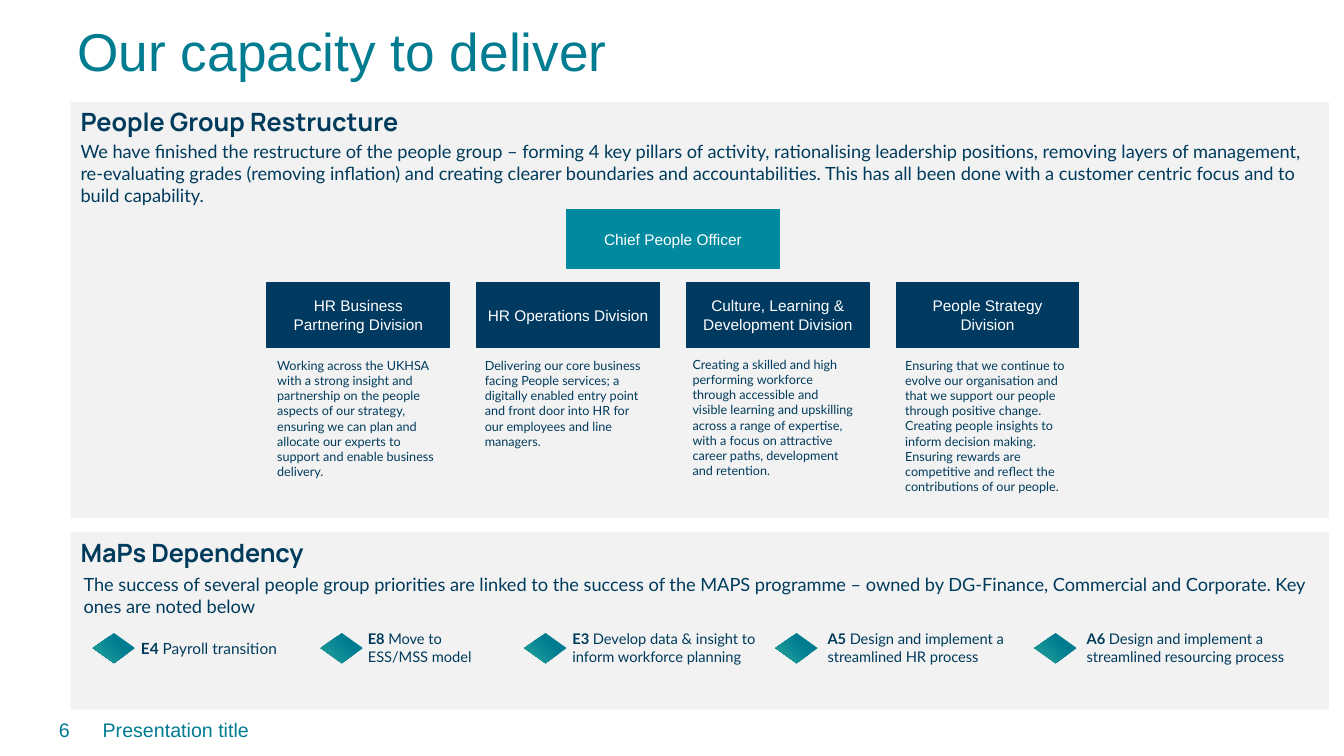
from dataclasses import dataclass

from lxml.etree import SubElement
from pptx import Presentation
from pptx.dml.color import RGBColor
from pptx.enum.shapes import MSO_SHAPE as Shape
from pptx.enum.text import MSO_ANCHOR as Anchor, MSO_AUTO_SIZE as AutoSize, PP_ALIGN as Align
from pptx.oxml.ns import qn
from pptx.util import Pt

PX = 9144  # EMU per px, 100 px to the inch


@dataclass(frozen=True)
class Theme:
    teal: str = "007C91"
    bright_teal: str = "008AA0"
    green: str = "26A59A"
    navy: str = "003A60"
    ink: str = "003B5C"
    panel: str = "F2F2F2"
    white: str = "FFFFFF"
    plain_font: str = "Arial"
    body_font: str = "Lato"
    heading_font: str = "Manrope"
    title_size: float = 38
    heading_size: float = 18
    footer_size: float = 14
    body_size: float = 13
    box_size: float = 11
    milestone_size: float = 10.5
    description_size: float = 9


THEME = Theme()

DIVISIONS = [
    ("HR Business Partnering Division", (265, 350, 181, 131),
     "Working across the UKHSA with a strong insight and partnership on the people aspects of "
     "our strategy, ensuring we can plan and allocate our experts to\n"
     "support and enable business\ndelivery."),
    ("HR Operations Division", (471, 350, 181, 101),
     "Delivering our core business facing People services; a\n"
     "digitally enabled entry point and front door into HR for our employees and line managers."),
    ("Culture, Learning & Development Division", (677, 349, 181, 131),
     "Creating a skilled and high\n"
     "performing workforce through accessible and visible learning and upskilling across a range "
     "of expertise, with a focus on attractive career paths, development and retention."),
    ("People Strategy Division", (888, 350, 187, 146),
     "Ensuring that we continue to\nevolve our organisation and\nthat we support our people\n"
     "through positive change. Creating people insights to inform decision making. "
     "Ensuring rewards are\ncompetitive and reflect the\ncontributions of our people."),
]

# code, wording, diamond left, text box, type size
MILESTONES = [
    ("E4", "Payroll transition", 92, (130, 629, 177, 29), THEME.box_size),
    ("E8", "Move to ESS/MSS model", 318, (355, 620, 131, 45), THEME.milestone_size),
    ("E3", "Develop data & insight to inform workforce planning", 520, (558, 620, 206, 45),
     THEME.milestone_size),
    ("A5", "Design and implement a streamlined HR process", 769, (811, 620, 220, 45),
     THEME.milestone_size),
    ("A6", "Design and implement a streamlined resourcing process", 1026, (1068, 620, 227, 45),
     THEME.milestone_size),
]


def emu(box):
    return [length * PX for length in box]


def style(paragraph, font, size, color, bold=False, align=Align.LEFT):
    paragraph.alignment = align
    for run in paragraph.runs:
        run.font.name = font
        run.font.size = Pt(size)
        run.font.bold = bold
        run.font.color.rgb = RGBColor.from_string(color)


def add_text(slide, box, text, font, size, color, align=Align.LEFT, anchor=Anchor.TOP,
             grow=False):
    text_frame = slide.shapes.add_textbox(*emu(box)).text_frame
    text_frame.word_wrap = True
    text_frame.auto_size = AutoSize.SHAPE_TO_FIT_TEXT if grow else AutoSize.NONE
    text_frame.vertical_anchor = anchor
    text_frame.text = text
    for paragraph in text_frame.paragraphs:
        style(paragraph, font, size, color, align=align)
    return text_frame


def add_rectangle(slide, box, fill, line=None):
    shape = slide.shapes.add_shape(Shape.RECTANGLE, *emu(box))
    shape.shadow.inherit = False
    shape.fill.solid()
    shape.fill.fore_color.rgb = RGBColor.from_string(fill)
    if line:
        shape.line.color.rgb = RGBColor.from_string(line)
        shape.line.width = Pt(1)
    else:
        shape.line.fill.background()
    shape.text_frame.word_wrap = True
    return shape


def add_panel(slide, box, heading):
    text_frame = add_rectangle(slide, box, THEME.panel).text_frame
    text_frame.vertical_anchor = Anchor.TOP
    text_frame.text = heading
    style(text_frame.paragraphs[0], THEME.heading_font, THEME.heading_size, THEME.ink, bold=True)
    return text_frame


def add_role(slide, box, text, color):
    text_frame = add_rectangle(slide, box, color, line=color).text_frame
    text_frame.vertical_anchor = Anchor.MIDDLE
    text_frame.text = text
    style(text_frame.paragraphs[0], THEME.plain_font, THEME.box_size, THEME.white,
          align=Align.CENTER)


def add_diamond(slide, left):
    """Decision shape whose gradient spreads from the lower left corner."""
    diamond = slide.shapes.add_shape(Shape.FLOWCHART_DECISION, *emu((left, 628, 42, 30)))
    diamond.shadow.inherit = False
    diamond.line.fill.background()
    diamond.fill.gradient()
    for stop, position, color in zip(diamond.fill.gradient_stops, (0, 0.65),
                                     (THEME.green, THEME.teal)):
        stop.position = position
        stop.color.rgb = RGBColor.from_string(color)
    gradient = diamond.element.spPr.find(qn("a:gradFill"))
    gradient.remove(gradient.find(qn("a:lin")))
    circle = SubElement(gradient, qn("a:path"), {"path": "circle"})
    SubElement(circle, qn("a:fillToRect"), {"t": "100000", "r": "100000"})


def add_milestone(slide, code, wording, diamond_left, box, size):
    add_diamond(slide, diamond_left)
    text_frame = add_text(slide, box, f"{code} ", THEME.body_font, size, THEME.ink, grow=True)
    paragraph = text_frame.paragraphs[0]
    paragraph.add_run().text = wording
    style(paragraph, THEME.body_font, size, THEME.ink)
    paragraph.runs[0].font.bold = True


def add_restructure(slide):
    text_frame = add_panel(slide, (70, 101, 1248, 413), "People Group Restructure")
    summary = text_frame.add_paragraph()
    summary.text = (
        "We have finished the restructure of the people group – forming 4 key pillars of "
        "activity, rationalising leadership positions, removing layers of management, "
        "re-evaluating grades (removing inflation) and creating clearer boundaries and "
        "accountabilities. This has all been done with a customer centric focus and to build "
        "capability.")
    summary.space_before = Pt(2.4)
    style(summary, THEME.body_font, THEME.body_size, THEME.ink)

    add_role(slide, (562, 208, 211, 58), "Chief People Officer", THEME.bright_teal)
    for index, (division, description_box, description) in enumerate(DIVISIONS):
        add_role(slide, (265 + 208 * index, 280, 181, 65), division, THEME.navy)
        add_text(slide, description_box, description, THEME.body_font, THEME.description_size,
                 THEME.ink, grow=True)


def add_dependency(slide):
    add_panel(slide, (70, 528, 1248, 176), "MaPs Dependency")
    add_text(slide, (73, 564, 1235, 54),
             "The success of several people group priorities are linked to the success of the "
             "MAPS programme – owned by DG-Finance, Commercial and Corporate. Key ones are noted "
             "below", THEME.body_font, THEME.body_size, THEME.ink, grow=True)
    for milestone in MILESTONES:
        add_milestone(slide, *milestone)


def main():
    presentation = Presentation()
    presentation.slide_width, presentation.slide_height = emu((1333, 750))
    slide = presentation.slides.add_slide(presentation.slide_layouts[6])

    title = add_text(slide, (67, 20, 1217, 106), "Our capacity to deliver", THEME.plain_font,
                     THEME.title_size, THEME.teal)
    title.paragraphs[0].line_spacing = 0.9
    footer = (THEME.plain_font, THEME.footer_size, THEME.teal)
    add_text(slide, (92, 704, 1094, 40), "Presentation title", *footer, anchor=Anchor.MIDDLE)
    add_text(slide, (14, 704, 65, 40), "6", *footer, align=Align.RIGHT, anchor=Anchor.MIDDLE)

    add_restructure(slide)
    add_dependency(slide)
    presentation.save("out.pptx")


if __name__ == "__main__":
    main()
